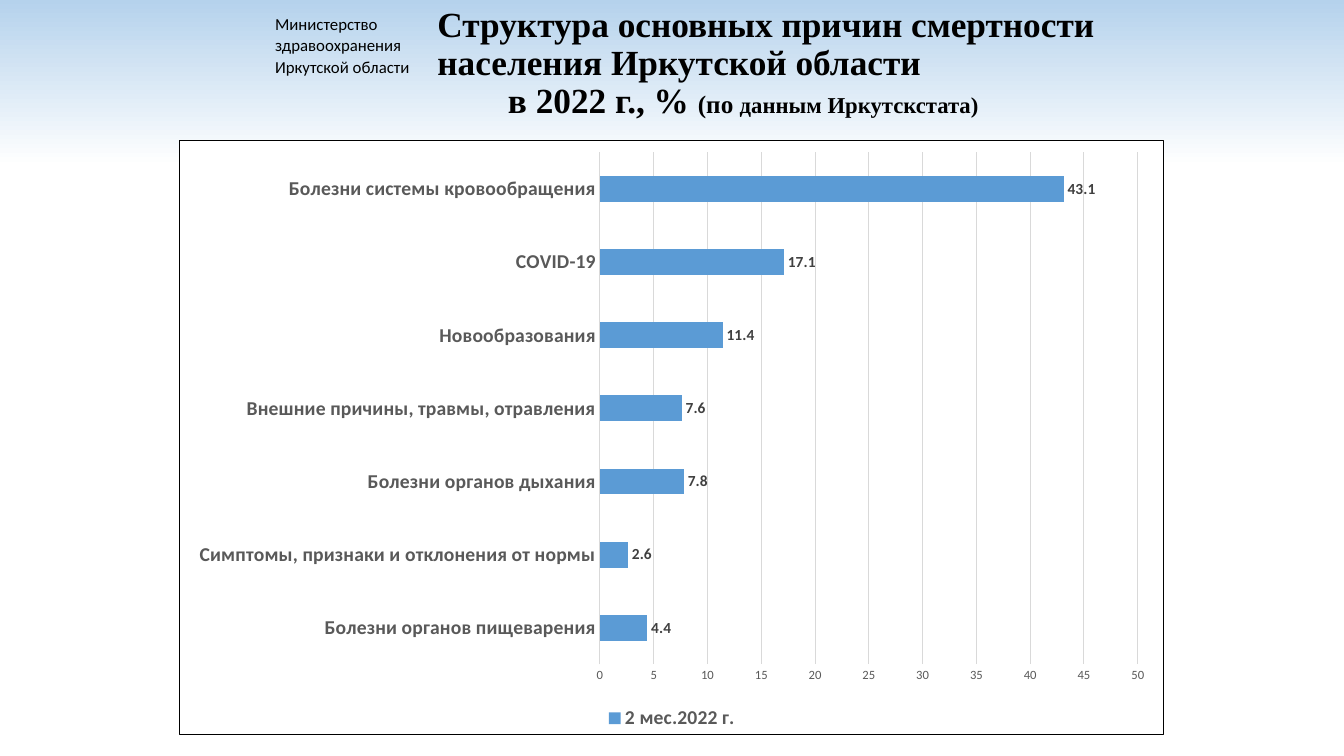
from dataclasses import dataclass

import lxml.etree
import pptx
import pptx.chart.chart
import pptx.chart.data
import pptx.dml.color
import pptx.enum.chart
import pptx.enum.text
import pptx.oxml
import pptx.oxml.ns
import pptx.slide
import pptx.util

SLIDE_WIDTH = pptx.util.Inches(13.33)
SLIDE_HEIGHT = pptx.util.Inches(7.5)


@dataclass(frozen=True)
class Area:
    left: float
    top: float
    width: float
    height: float

    def emu(self) -> tuple[int, int, int, int]:
        return (
            round(SLIDE_WIDTH * self.left / 100),
            round(SLIDE_HEIGHT * self.top / 100),
            round(SLIDE_WIDTH * self.width / 100),
            round(SLIDE_HEIGHT * self.height / 100),
        )


@dataclass(frozen=True)
class Run:
    text: str
    size: float


@dataclass(frozen=True)
class Line:
    runs: tuple[Run, ...]
    indent: float = 0


@dataclass(frozen=True)
class TextBlock:
    area: Area
    lines: tuple[Line, ...]
    font: str
    bold: bool
    spacing: float
    space_after: float
    anchor: pptx.enum.text.MSO_ANCHOR


@dataclass(frozen=True)
class Cause:
    name: str
    share: float


TEXT_BLOCKS = (
    TextBlock(
        Area(31.81, 0.93, 54.84, 15.2),
        (
            Line((Run("Структура основных причин смертности населения Иркутской области", 25.2),)),
            Line(
                (Run("в 2022 г., % ", 25.2), Run("(по ", 18), Run("данным Иркутскстата)", 16.2)),
                indent=0.7,
            ),
        ),
        "Times New Roman", True, 0.9, 0, pptx.enum.text.MSO_ANCHOR.MIDDLE,
    ),
    TextBlock(
        Area(19.73, 0.93, 12.15, 9.87),
        (Line((Run("Министерство здравоохранения Иркутской области", 12),)),),
        "Calibri", False, 1.07, 8, pptx.enum.text.MSO_ANCHOR.TOP,
    ),
)

CHART_AREA = Area(13.35, 18.53, 73.29, 78.67)
CAUSES = (
    Cause("Болезни органов пищеварения", 4.4),
    Cause("Симптомы, признаки и отклонения от нормы", 2.6),
    Cause("Болезни органов дыхания", 7.8),
    Cause("Внешние причины, травмы, отравления", 7.6),
    Cause("Новообразования", 11.4),
    Cause("COVID-19", 17.1),
    Cause("Болезни системы кровообращения", 43.1),
)


def rgb(value: str) -> pptx.dml.color.RGBColor:
    return pptx.dml.color.RGBColor.from_string(value)


def style_font(font, name: str, size: float, color: str, bold: bool = False) -> None:
    font.name = name
    font.size = pptx.util.Pt(size)
    font.bold = bold
    font.color.rgb = rgb(color)


def style_line(line, color: str) -> None:
    line.color.rgb = rgb(color)
    line.width = pptx.util.Pt(0.75)


def paint_background(s: pptx.slide.Slide) -> None:
    fill = s.background.fill
    fill.gradient()
    fill.gradient_angle = 270
    for stop, (position, color) in zip(fill.gradient_stops, ((0, "B5D2EC"), (0.22, "FFFFFF"))):
        stop.position = position
        stop.color.rgb = rgb(color)


def draw_text(s: pptx.slide.Slide, block: TextBlock) -> None:
    tf = s.shapes.add_textbox(*block.area.emu()).text_frame
    tf.word_wrap = True
    tf.vertical_anchor = block.anchor
    for i, line in enumerate(block.lines):
        p = tf.add_paragraph() if i else tf.paragraphs[0]
        p.line_spacing = block.spacing
        p.space_after = pptx.util.Pt(block.space_after)
        if line.indent:
            p._p.get_or_add_pPr().set("marL", str(pptx.util.Inches(line.indent)))
        for run in line.runs:
            r = p.add_run()
            r.text = run.text
            style_font(r.font, block.font, run.size, "000000", block.bold)


def frame_chart(chart: pptx.chart.chart.Chart, fill: str, border: str) -> None:
    sp_pr = pptx.oxml.parse_xml(
        f'<c:spPr {pptx.oxml.ns.nsdecls("c", "a")}>'
        f'<a:solidFill><a:srgbClr val="{fill}"/></a:solidFill>'
        f'<a:ln w="{pptx.util.Pt(0.75)}"><a:solidFill><a:srgbClr val="{border}"/></a:solidFill></a:ln>'
        "</c:spPr>"
    )
    chart._chartSpace.find(pptx.oxml.ns.qn("c:chart")).addnext(sp_pr)


def draw_chart(s: pptx.slide.Slide) -> None:
    data = pptx.chart.data.CategoryChartData()
    data.categories = [cause.name for cause in CAUSES]
    data.add_series("2 мес.2022 г.", [cause.share for cause in CAUSES])
    chart = s.shapes.add_chart(
        pptx.enum.chart.XL_CHART_TYPE.BAR_CLUSTERED, *CHART_AREA.emu(), data
    ).chart
    style_font(chart.font, "Calibri", 10, "000000")
    frame_chart(chart, "FFFFFF", "000000")
    chart.has_title = False
    chart.has_legend = True
    chart.legend.position = pptx.enum.chart.XL_LEGEND_POSITION.BOTTOM
    chart.legend.include_in_layout = False
    style_font(chart.legend.font, "Calibri", 14, "595959", True)

    for axis, size, bold in ((chart.category_axis, 14, True), (chart.value_axis, 9, False)):
        axis.major_tick_mark = pptx.enum.chart.XL_TICK_MARK.NONE
        axis.minor_tick_mark = pptx.enum.chart.XL_TICK_MARK.NONE
        style_font(axis.tick_labels.font, "Calibri", size, "595959", bold)
    style_line(chart.category_axis.format.line, "D9D9D9")
    value_axis = chart.value_axis
    value_axis.minimum_scale = 0
    value_axis.maximum_scale = 50
    value_axis.major_unit = 5
    value_axis.format.line.fill.background()
    value_axis.has_major_gridlines = True
    style_line(value_axis.major_gridlines.format.line, "D9D9D9")

    plot = chart.plots[0]
    plot.gap_width = 182
    plot.vary_by_categories = False
    series = plot.series[0]
    series.format.fill.solid()
    series.format.fill.fore_color.rgb = rgb("5B9BD5")
    labels = series.data_labels
    labels.show_value = True
    labels.position = pptx.enum.chart.XL_LABEL_POSITION.OUTSIDE_END
    style_font(labels.font, "Calibri", 11, "404040", True)


def main() -> None:
    prs = pptx.Presentation()
    prs.slide_width = SLIDE_WIDTH
    prs.slide_height = SLIDE_HEIGHT
    s = prs.slides.add_slide(prs.slide_layouts[6])
    paint_background(s)
    for block in TEXT_BLOCKS:
        draw_text(s, block)
    draw_chart(s)
    prs.save("out.pptx")


if __name__ == "__main__":
    main()
